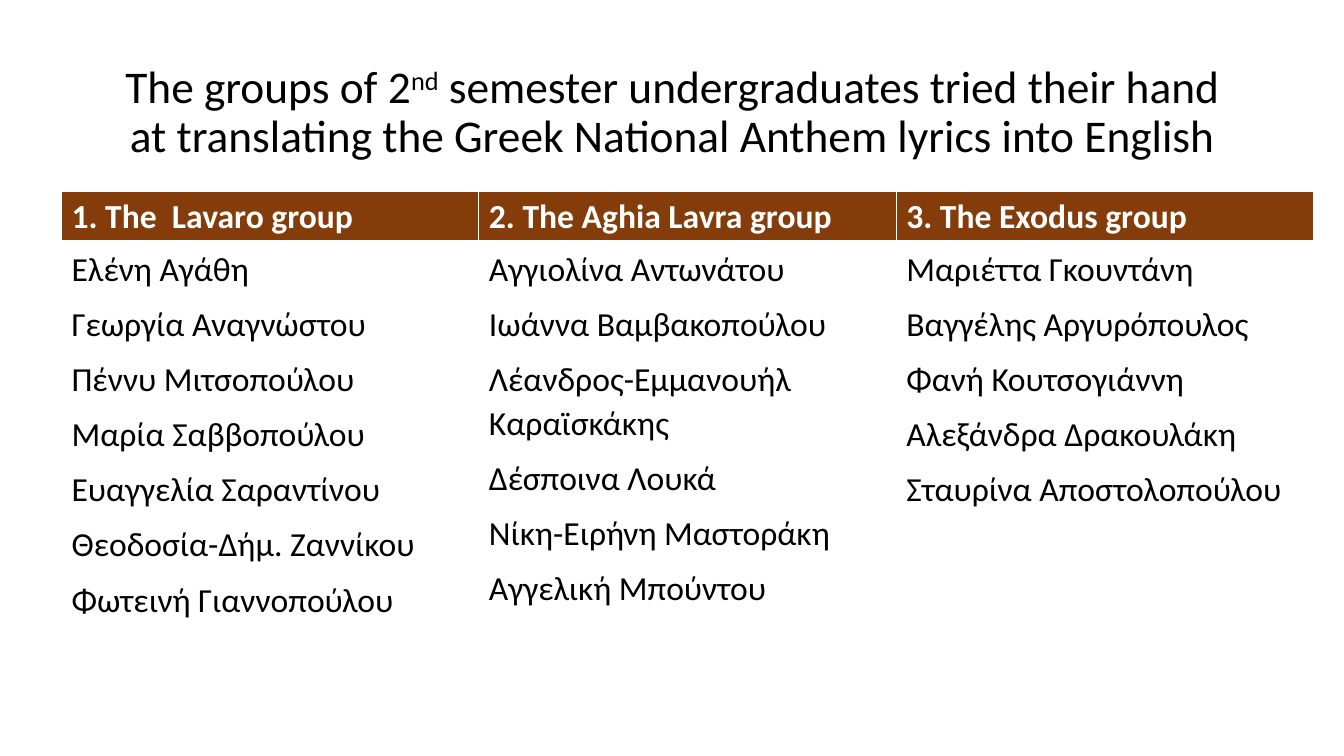
from lxml.etree import SubElement
from pptx import Presentation
from pptx.dml.color import RGBColor
from pptx.enum.text import MSO_ANCHOR, PP_ALIGN
from pptx.oxml.ns import qn
from pptx.util import Inches, Pt

TITLE = [
    ("The groups of 2", False),
    ("nd", True),
    (" semester undergraduates tried their hand at translating "
     "the Greek National Anthem lyrics into English", False),
]
GROUPS = {
    "1. The  Lavaro group": [
        "Ελένη Αγάθη", "Γεωργία Αναγνώστου", "Πέννυ Μιτσοπούλου",
        "Μαρία Σαββοπούλου", "Ευαγγελία Σαραντίνου",
        "Θεοδοσία-Δήμ. Ζαννίκου", "Φωτεινή Γιαννοπούλου",
    ],
    "2. The Aghia Lavra group": [
        "Αγγιολίνα Αντωνάτου", "Ιωάννα Βαμβακοπούλου",
        "Λέανδρος-Εμμανουήλ Καραϊσκάκης", "Δέσποινα Λουκά",
        "Νίκη-Ειρήνη Μαστοράκη", "Αγγελική Μπούντου",
    ],
    "3. The Exodus group": [
        "Μαριέττα Γκουντάνη", "Βαγγέλης Αργυρόπουλος", "Φανή Κουτσογιάννη",
        "Αλεξάνδρα Δρακουλάκη", "Σταυρίνα Αποστολοπούλου",
    ],
}
FONT = "Calibri"
BLACK = RGBColor(0x00, 0x00, 0x00)
WHITE = RGBColor(0xFF, 0xFF, 0xFF)
BROWN = RGBColor(0x84, 0x3C, 0x0B)
COLUMN_WIDTH, HEADER_HEIGHT, BODY_HEIGHT = 4.14, 0.49, 4.17


def style_run(r, size, color, bold=False):
    r.font.name = FONT
    r.font.size = Pt(size)
    r.font.bold = bold
    r.font.color.rgb = color


def set_borders(cell, bottom):
    """Give a cell white borders, 1 pt wide except at the bottom."""
    tc_pr = cell._tc.get_or_add_tcPr()
    for side, width in (("L", 1), ("R", 1), ("T", 1), ("B", bottom)):
        ln = SubElement(tc_pr, qn(f"a:ln{side}"), w=str(Pt(width)))
        fill = SubElement(ln, qn("a:solidFill"))
        SubElement(fill, qn("a:srgbClr"), val=str(WHITE))


def fill_cell(cell, lines, fill, color, header):
    set_borders(cell, 3 if header else 1)
    cell.fill.solid()
    cell.fill.fore_color.rgb = fill
    cell.text_frame.text = "\n".join(lines)
    for p in cell.text_frame.paragraphs:
        if not header:
            p.line_spacing = 1.07
            p.space_after = Pt(8)
        style_run(p.runs[0], 24, color, bold=header)


def add_title(s):
    sp = s.shapes.add_textbox(Inches(0.92), Inches(0.4), Inches(11.5), Inches(1.45))
    tf = sp.text_frame
    tf.word_wrap = True
    tf.vertical_anchor = MSO_ANCHOR.MIDDLE
    p = tf.paragraphs[0]
    p.alignment = PP_ALIGN.CENTER
    p.line_spacing = 0.9
    for text, superscript in TITLE:
        r = p.add_run()
        r.text = text
        style_run(r, 32.4, BLACK)
        if superscript:
            r._r.get_or_add_rPr().set("baseline", "30000")


def add_groups(s):
    table = s.shapes.add_table(
        2, len(GROUPS), Inches(0.61), Inches(1.9),
        Inches(COLUMN_WIDTH * len(GROUPS)), Inches(HEADER_HEIGHT + BODY_HEIGHT)).table
    table.rows[0].height = Inches(HEADER_HEIGHT)
    table.rows[1].height = Inches(BODY_HEIGHT)
    for col, (group, members) in enumerate(GROUPS.items()):
        table.columns[col].width = Inches(COLUMN_WIDTH)
        fill_cell(table.cell(0, col), [group], BROWN, WHITE, header=True)
        fill_cell(table.cell(1, col), members, WHITE, BLACK, header=False)


def main():
    prs = Presentation()
    prs.slide_width, prs.slide_height = Inches(13.33), Inches(7.5)
    s = prs.slides.add_slide(prs.slide_layouts[6])
    add_title(s)
    add_groups(s)
    prs.save("out.pptx")


if __name__ == "__main__":
    main()
